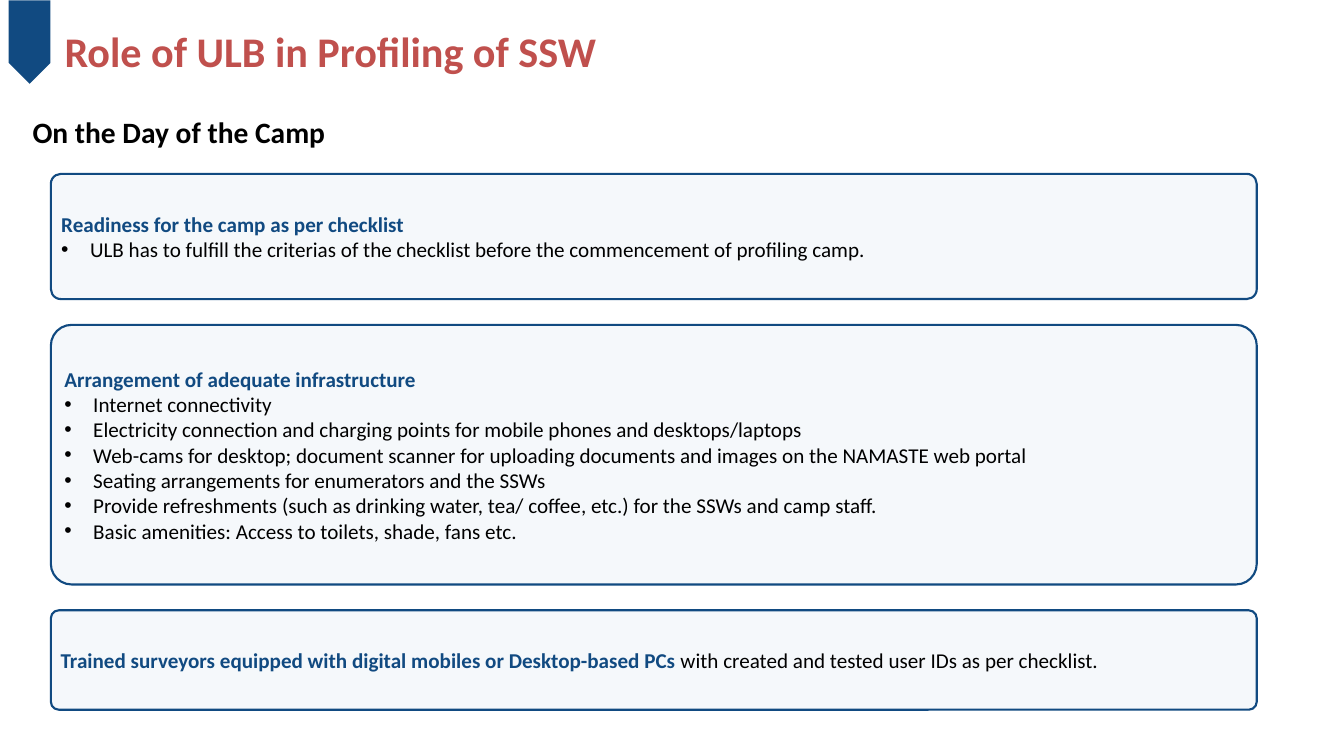
from lxml import etree
from pptx import Presentation
from pptx.dml.color import RGBColor
from pptx.enum.shapes import MSO_SHAPE
from pptx.enum.text import MSO_ANCHOR, MSO_AUTO_SIZE, PP_ALIGN
from pptx.oxml.ns import qn
from pptx.util import Pt

ROUNDED = MSO_SHAPE.ROUNDED_RECTANGLE
PENTAGON = MSO_SHAPE.PENTAGON
MIDDLE = MSO_ANCHOR.MIDDLE
TOP = MSO_ANCHOR.TOP
LEFT = PP_ALIGN.LEFT
NO_FIT = MSO_AUTO_SIZE.NONE
GROW = MSO_AUTO_SIZE.SHAPE_TO_FIT_TEXT

EMU_PER_PX = 9144
NAVY, RED, BLACK, PALE = "114A81", "C0504D", "000000", "DAE5F1"


def px(length):
    """Turn px into EMU, at 100 px to the inch."""
    return length * EMU_PER_PX


def color(code):
    """Turn a hex string into a colour."""
    return RGBColor.from_string(code)


class CampSlide:
    """Holds the style and the slide, and draws each kind of element."""

    font = "Calibri"
    body_size = 20
    bullet_indent = 38
    corner = 0.08

    def __init__(self, deck):
        """Add a title-only slide to the deck."""
        self.slide = deck.slides.add_slide(deck.slide_layouts[5])

    def frame(self, shape, inset_x, inset_y, anchor, fit):
        """Set up and return the text frame of a shape."""
        frame = shape.text_frame
        frame.word_wrap = True
        frame.auto_size = fit
        frame.vertical_anchor = anchor
        frame.margin_left = frame.margin_right = px(inset_x)
        frame.margin_top = frame.margin_bottom = px(inset_y)
        return frame

    def run(self, paragraph, text, size, code, bold):
        """Add one styled run to a left-aligned paragraph."""
        paragraph.alignment = LEFT
        run = paragraph.add_run()
        run.text = text
        run.font.name = self.font
        run.font.size = Pt(size)
        run.font.bold = bold
        run.font.color.rgb = color(code)

    def bullet(self, paragraph):
        """Give a paragraph a black bullet and a hanging indent."""
        props = paragraph._p.get_or_add_pPr()
        props.set("marL", str(px(self.bullet_indent)))
        props.set("indent", str(-px(self.bullet_indent)))
        bullet_color = etree.SubElement(props, qn("a:buClr"))
        etree.SubElement(bullet_color, qn("a:srgbClr"), val=BLACK)
        etree.SubElement(props, qn("a:buFont"), typeface="Arial")
        etree.SubElement(props, qn("a:buChar"), char="•")

    def title(self, text, *box):
        """Place and fill the title placeholder."""
        title = self.slide.shapes.title
        title.left, title.top, title.width, title.height = map(px, box)
        frame = self.frame(title, 11, 6, MIDDLE, NO_FIT)
        self.run(frame.paragraphs[0], text, 40, RED, True)

    def subtitle(self, text, *box):
        """Add the heading below the title."""
        heading = self.slide.shapes.add_textbox(*map(px, box))
        frame = self.frame(heading, 10, 5, TOP, GROW)
        self.run(frame.paragraphs[0], text, 28, BLACK, True)

    def shape(self, kind, adjustment, fill, *box):
        """Add a filled preset shape without shadow."""
        shape = self.slide.shapes.add_shape(kind, *map(px, box))
        shape.adjustments[0] = adjustment
        shape.shadow.inherit = False
        shape.fill.solid()
        shape.fill.fore_color.rgb = color(fill)
        return shape

    def ribbon(self, *box):
        """Add the ribbon that points down beside the title."""
        ribbon = self.shape(PENTAGON, 0.5, NAVY, *box)
        ribbon.rotation = 90
        ribbon.line.fill.background()

    def card(self, top, height, lead, rest="", bullets=()):
        """Add a translucent card with a bold lead and its details."""
        card = self.shape(ROUNDED, self.corner, PALE, 67, top, 1589, height)
        fill_color = card._element.spPr.find(qn("a:solidFill")).find(qn("a:srgbClr"))
        etree.SubElement(fill_color, qn("a:alpha"), val="25000")
        card.line.color.rgb = color(NAVY)
        card.line.width = Pt(2)
        frame = self.frame(card, 10, 5, MIDDLE, NO_FIT)
        opening = frame.paragraphs[0]
        self.run(opening, lead, self.body_size, NAVY, True)
        if rest:
            self.run(opening, rest, self.body_size, BLACK, False)
        for detail in bullets:
            paragraph = frame.add_paragraph()
            self.bullet(paragraph)
            self.run(paragraph, detail, self.body_size, BLACK, False)


def main():
    """Build the slide and save it."""
    deck = Presentation()
    deck.slide_width, deck.slide_height = px(1771), px(996)
    camp = CampSlide(deck)
    camp.title("Role of ULB in Profiling of SSW", 74, 23, 1582, 87)
    camp.ribbon(-16, 28, 110, 55)
    camp.subtitle("On the Day of the Camp", 33, 145, 448, 57)

    cards = [
        (165, "Readiness for the camp as per checklist", "", [
            "ULB has to fulfill the criterias of the checklist before the "
            "commencement of profiling camp.",
        ]),
        (342, "Arrangement of adequate infrastructure", "", [
            "Internet connectivity",
            "Electricity connection and charging points for mobile phones "
            "and desktops/laptops",
            "Web-cams for desktop; document scanner for uploading documents "
            "and images on the NAMASTE web portal",
            "Seating arrangements for enumerators and the SSWs",
            "Provide refreshments (such as drinking water, tea/ coffee, etc.) "
            "for the SSWs and camp staff.",
            "Basic amenities: Access to toilets, shade, fans etc.",
        ]),
        (131, "Trained surveyors equipped with digital mobiles or "
              "Desktop-based PCs ",
         "with created and tested user IDs as per checklist.", []),
    ]
    top, gap = 229, 34
    for height, lead, rest, bullets in cards:
        camp.card(top, height, lead, rest, bullets)
        top += height + gap

    deck.save("out.pptx")


if __name__ == "__main__":
    main()
